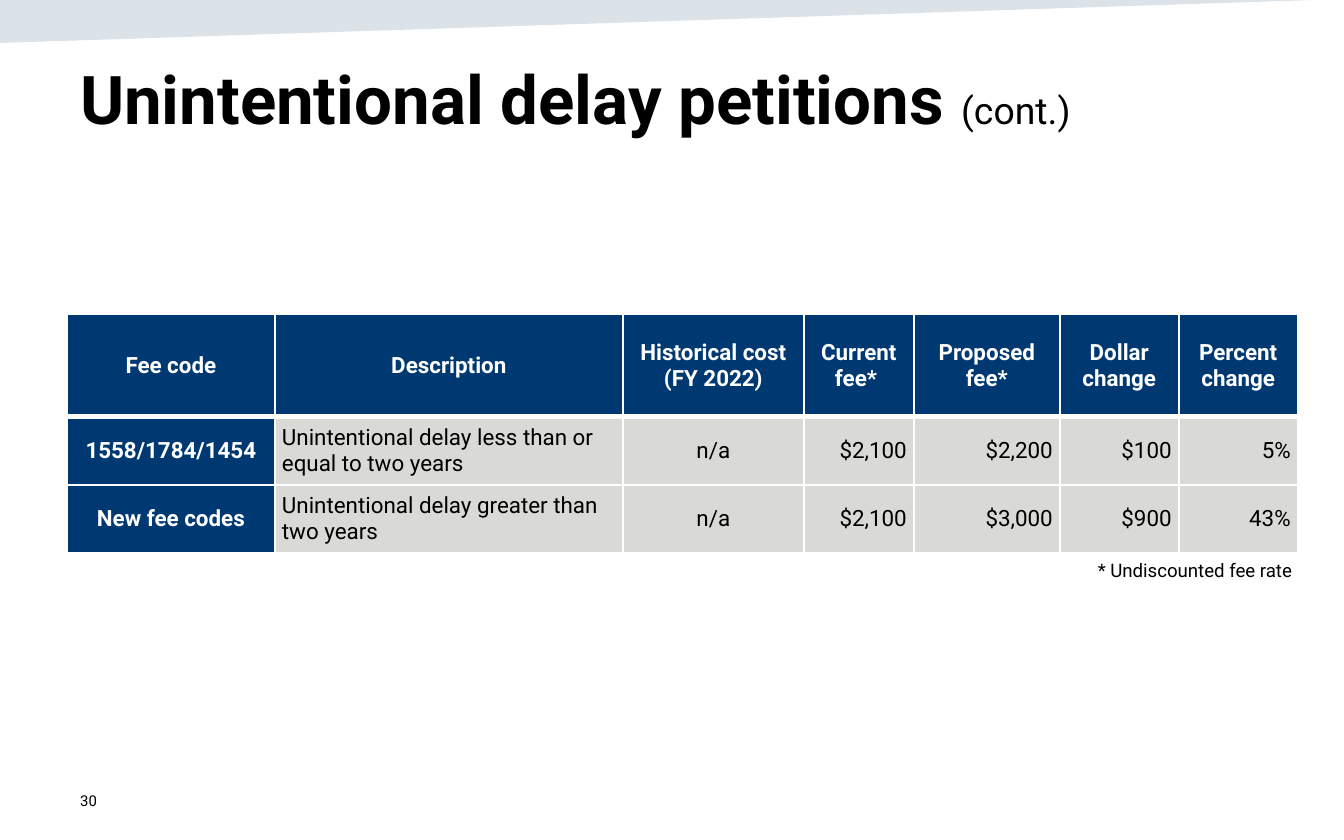
from lxml.etree import SubElement
from pptx import Presentation
from pptx.dml.color import RGBColor
from pptx.enum.text import MSO_ANCHOR as Anchor, PP_ALIGN as Align
from pptx.oxml.ns import qn
from pptx.util import Emu, Pt

NAVY = RGBColor(0x00, 0x39, 0x71)
GREY = RGBColor(0xD9, 0xD9, 0xD6)
BAND = RGBColor(0x16, 0x44, 0x69)
WHITE = RGBColor(0xFF, 0xFF, 0xFF)
BLACK = RGBColor(0x00, 0x00, 0x00)
FONT = "Roboto"
SCALE = 914400 / 134.4

TITLE = [("Unintentional delay petitions ", 36, True), ("(cont.)", 20, False)]
PAGE_NUMBER = [("30", 8, False)]
FOOTNOTE = [("* Undiscounted fee rate", 10, False)]
FEES = [
    ("Fee code", "Description", "Historical cost\n(FY 2022)", "Current fee* ",
     "Proposed fee*", "Dollar change", "Percent change"),
    ("1558/1784/1454", "Unintentional delay less than or equal to two years",
     "n/a", "$2,100", "$2,200", "$100", "5%"),
    ("New fee codes", "Unintentional delay greater than two years",
     "n/a", "$2,100", "$3,000", "$900", "43%"),
]
COLUMN_WIDTHS = [208, 348, 181, 110, 146, 119, 119]
ROW_HEIGHTS = [103, 66, 66]
COLUMN_ALIGNS = [Align.CENTER, Align.LEFT, Align.CENTER] + [Align.RIGHT] * 4
BAND_CORNERS = [(0, -1), (0, 43), (1346, -1)]


def px(length):
    """Turn px into EMU."""
    return Emu(round(length * SCALE))


def style(span, size, bold, color):
    """Set the font of one run."""
    span.font.name = FONT
    span.font.size = Pt(size)
    span.font.bold = bold
    span.font.color.rgb = color


def add_band(page):
    """Draw the pale wedge along the top edge."""
    builder = page.shapes.build_freeform(*BAND_CORNERS[0], scale=SCALE)
    builder.add_line_segments(BAND_CORNERS[1:], close=True)
    band = builder.convert_to_shape()
    band.shadow.inherit = False
    band.line.fill.background()
    band.fill.solid()
    band.fill.fore_color.rgb = BAND
    color = band.fill._xPr.find(qn("a:solidFill"))[0]
    SubElement(color, qn("a:alpha"), val="15000")


def add_text(page, area, spans, align=Align.LEFT, anchor=Anchor.TOP, top=7):
    """Add a one-paragraph text box."""
    box = page.shapes.add_textbox(*map(px, area))
    frame = box.text_frame
    frame.word_wrap = True
    frame.vertical_anchor = anchor
    frame.margin_top = px(top)
    para = frame.paragraphs[0]
    para.alignment = align
    for words, size, bold in spans:
        span = para.add_run()
        span.text = words
        style(span, size, bold, BLACK)


def add_border(cell, side, width):
    """Add a white line to one side of a cell."""
    line = SubElement(cell._tc.get_or_add_tcPr(), qn(f"a:{side}"), w=str(Pt(width)))
    fill = SubElement(line, qn("a:solidFill"))
    SubElement(fill, qn("a:srgbClr"), val=str(WHITE))


def fill_cell(cell, words, row, column):
    """Write and format one table cell by its place in the grid."""
    heading = row == 0 or column == 0
    widths = {"lnL": 1, "lnR": 1, "lnT": 3 if row == 1 else 1, "lnB": 3 if row == 0 else 1}
    for side, width in widths.items():
        add_border(cell, side, width)
    cell.fill.solid()
    cell.fill.fore_color.rgb = NAVY if heading else GREY
    cell.vertical_anchor = Anchor.MIDDLE
    cell.margin_left = cell.margin_right = cell.margin_top = cell.margin_bottom = px(7)
    cell.text_frame.text = words
    for para in cell.text_frame.paragraphs:
        para.alignment = Align.CENTER if row == 0 else COLUMN_ALIGNS[column]
        if row:
            para.space_before = para.space_after = Pt(6)
        for span in para.runs:
            style(span, 12, heading, WHITE if heading else BLACK)


def add_fees(page):
    """Add the fee table."""
    area = (67, 314, sum(COLUMN_WIDTHS), sum(ROW_HEIGHTS))
    table = page.shapes.add_table(len(FEES), len(COLUMN_WIDTHS), *map(px, area)).table
    for column, width in zip(table.columns, COLUMN_WIDTHS):
        column.width = px(width)
    for row, height in zip(table.rows, ROW_HEIGHTS):
        row.height = px(height)
    for row, entries in enumerate(FEES):
        for column, words in enumerate(entries):
            fill_cell(table.cell(row, column), words, row, column)


def main():
    """Build the fee slide."""
    deck = Presentation()
    deck.slide_width, deck.slide_height = px(1344), px(840)
    page = deck.slides.add_slide(deck.slide_layouts[6])
    add_band(page)
    add_text(page, (67, 778, 302, 44), PAGE_NUMBER, anchor=Anchor.MIDDLE)
    add_text(page, (67, 46, 1210, 140), TITLE, top=11)
    add_fees(page)
    add_text(page, (112, 552, 1193, 36), FOOTNOTE, align=Align.RIGHT)
    deck.save("out.pptx")


if __name__ == "__main__":
    main()
